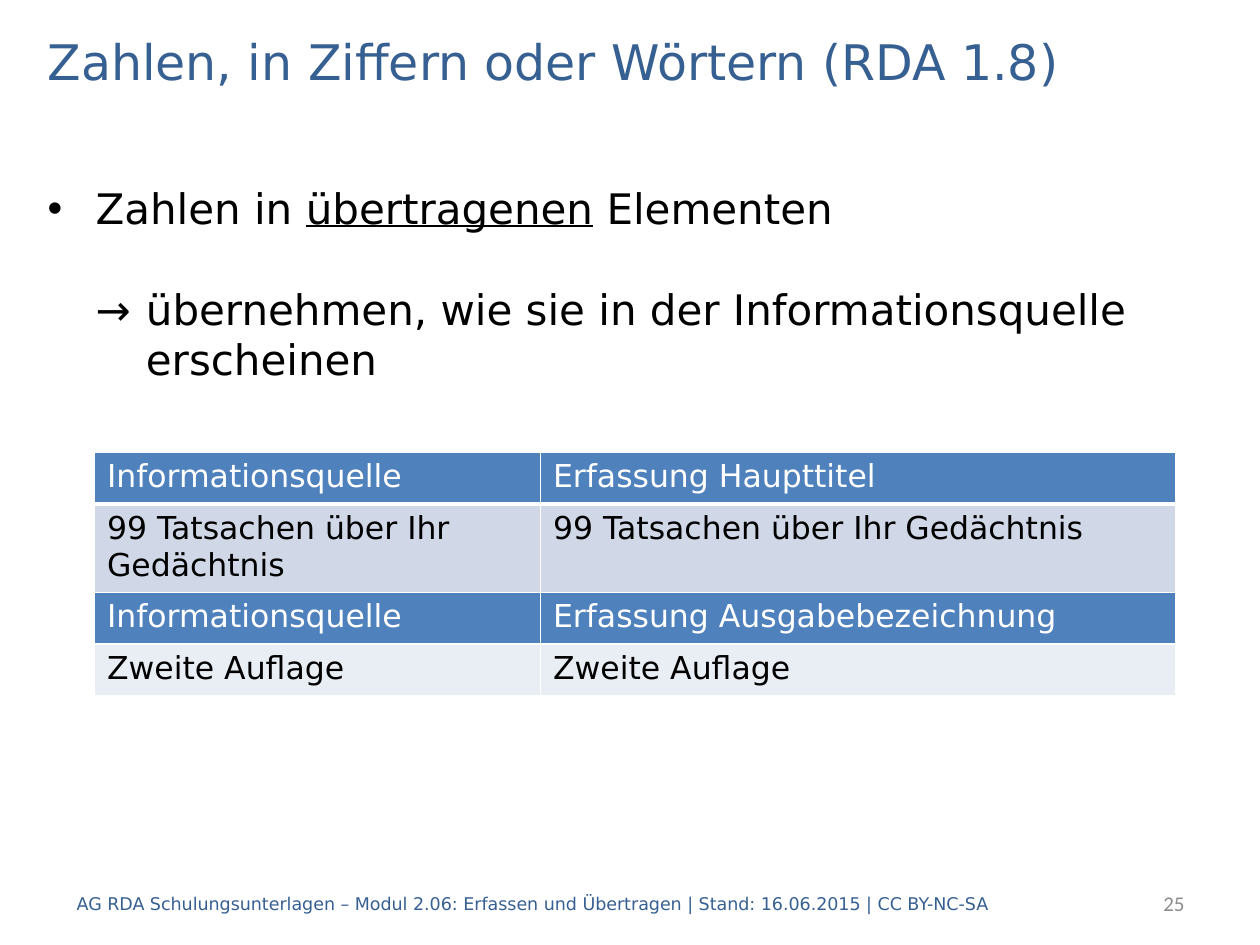
from dataclasses import dataclass

from lxml import etree
from pptx import Presentation
from pptx import util as u
from pptx.dml.color import RGBColor
from pptx.enum import text
from pptx.oxml import ns


@dataclass(frozen=True)
class Theme:
    """Colours, fonts and type sizes of the slide."""
    face: str = "DejaVu Sans"
    plain: str = "Calibri"
    blue: str = "376092"
    head: str = "4F81BD"
    dark: str = "D0D8E8"
    pale: str = "E9EDF4"
    white: str = "FFFFFF"
    black: str = "000000"
    gray: str = "8C8C8C"
    title: int = 28
    body: int = 24
    cell: int = 18
    foot: int = 10
    page: int = 12


class Deck:
    """Holds the theme and the current slide and adds elements to it."""

    def __init__(self, theme):
        """Open a deck with one blank slide."""
        self.theme = theme
        self.file = Presentation()
        self.file.slide_width, self.file.slide_height = u.Inches(10), u.Inches(7.5)
        self.slide = self.file.slides.add_slide(self.file.slide_layouts[6])

    def style(self, para, size, color, face=None):
        """Format every run of a paragraph."""
        for run in para.runs:
            run.font.name = face or self.theme.face
            run.font.size = u.Pt(size)
            run.font.color.rgb = RGBColor.from_string(color)

    def frame(self, area, anchor):
        """Add an empty wrapping text box and return its frame."""
        box = self.slide.shapes.add_textbox(*map(u.Inches, area))
        frame = box.text_frame
        frame.word_wrap = True
        frame.vertical_anchor = anchor
        return frame

    def label(self, words, area, size, color, face=None, align=text.PP_ALIGN.LEFT):
        """Add a single line of text, centred in height."""
        frame = self.frame(area, text.MSO_ANCHOR.MIDDLE)
        frame.text = words
        para = frame.paragraphs[0]
        para.alignment = align
        self.style(para, size, color, face)

    def indent(self, para, left, hang, mark=None):
        """Give a paragraph a hanging indent and maybe a bullet."""
        props = para._p.get_or_add_pPr()
        props.set("marL", str(u.Inches(left)))
        props.set("indent", str(-u.Inches(hang)))
        if mark:
            font = etree.SubElement(props, ns.qn("a:buFont"))
            font.set("typeface", "Arial")
            etree.SubElement(props, ns.qn("a:buChar")).set("char", mark)
        else:
            etree.SubElement(props, ns.qn("a:buNone"))

    def body(self, parts, under, note, area):
        """Add a bullet with one underlined part and a note below it."""
        theme = self.theme
        frame = self.frame(area, text.MSO_ANCHOR.TOP)
        point = frame.paragraphs[0]
        self.indent(point, 0.38, 0.38, "•")
        for part in parts:
            run = point.add_run()
            run.text = part
            run.font.underline = part == under
        hint = frame.add_paragraph()
        hint.text = note
        self.indent(hint, 0.78, 0.4)
        hint.space_before = u.Pt(theme.body * 1.2)
        for para in frame.paragraphs:
            self.style(para, theme.body, theme.black)

    def border(self, cell, sides):
        """Draw white borders of the given widths on a cell."""
        props = cell._tc.get_or_add_tcPr()
        for side, width in sides.items():
            line = etree.SubElement(props, ns.qn(f"a:ln{side}"))
            line.set("w", str(u.Pt(width)))
            fill = etree.SubElement(line, ns.qn("a:solidFill"))
            etree.SubElement(fill, ns.qn("a:srgbClr")).set("val", self.theme.white)

    def table(self, rows, spot, widths, heights):
        """Add a table from rows of texts, fill and text colour."""
        size = sum(widths), sum(heights)
        shape = self.slide.shapes.add_table(
            len(rows), len(widths), *map(u.Inches, (*spot, *size)))
        grid = shape.table
        for col, width in zip(grid.columns, widths):
            col.width = u.Inches(width)
        for row, height in zip(grid.rows, heights):
            row.height = u.Inches(height)
        for r, (words, fill, color) in enumerate(rows):
            for c, word in enumerate(words):
                cell = grid.cell(r, c)
                self.border(cell, {"L": 1, "R": 1, "T": 3 if r == 1 else 1,
                                   "B": 3 if r == 0 else 1})
                cell.fill.solid()
                cell.fill.fore_color.rgb = RGBColor.from_string(fill)
                cell.text_frame.text = word
                para = cell.text_frame.paragraphs[0]
                self.style(para, self.theme.cell, color)
                para.font.bold = False
                for run in para.runs:
                    run.font.bold = False


def main():
    """Build the slide and save it."""
    theme = Theme()
    deck = Deck(theme)
    deck.label("Zahlen, in Ziffern oder Wörtern (RDA 1.8)",
               (0.28, 0.2, 9.45, 0.56), theme.title, theme.blue)
    deck.body(("Zahlen in ", "übertragenen", " Elementen"), "übertragenen",
              "→\tübernehmen, wie sie in der Informationsquelle erscheinen",
              (0.28, 1.4, 9.45, 5.5))
    deck.label("AG RDA Schulungsunterlagen – Modul 2.06: Erfassen und Übertragen"
               " | Stand: 16.06.2015 | CC BY-NC-SA",
               (0.51, 6.97, 8.35, 0.4), theme.foot, theme.blue)
    deck.label("25", (7.91, 6.97, 1.59, 0.4), theme.page, theme.gray,
               theme.plain, text.PP_ALIGN.RIGHT)
    source, fact, issue = ("Informationsquelle", "99 Tatsachen über Ihr Gedächtnis",
                           "Zweite Auflage")
    rows = (
        ((source, "Erfassung Haupttitel"), theme.head, theme.white),
        ((fact, fact), theme.dark, theme.black),
        ((source, "Erfassung Ausgabebezeichnung"), theme.head, theme.white),
        ((issue, issue), theme.pale, theme.black),
    )
    deck.table(rows, (0.75, 3.59), (3.54, 5.04), (0.41, 0.68, 0.41, 0.41))
    deck.file.save("out.pptx")


if __name__ == "__main__":
    main()
